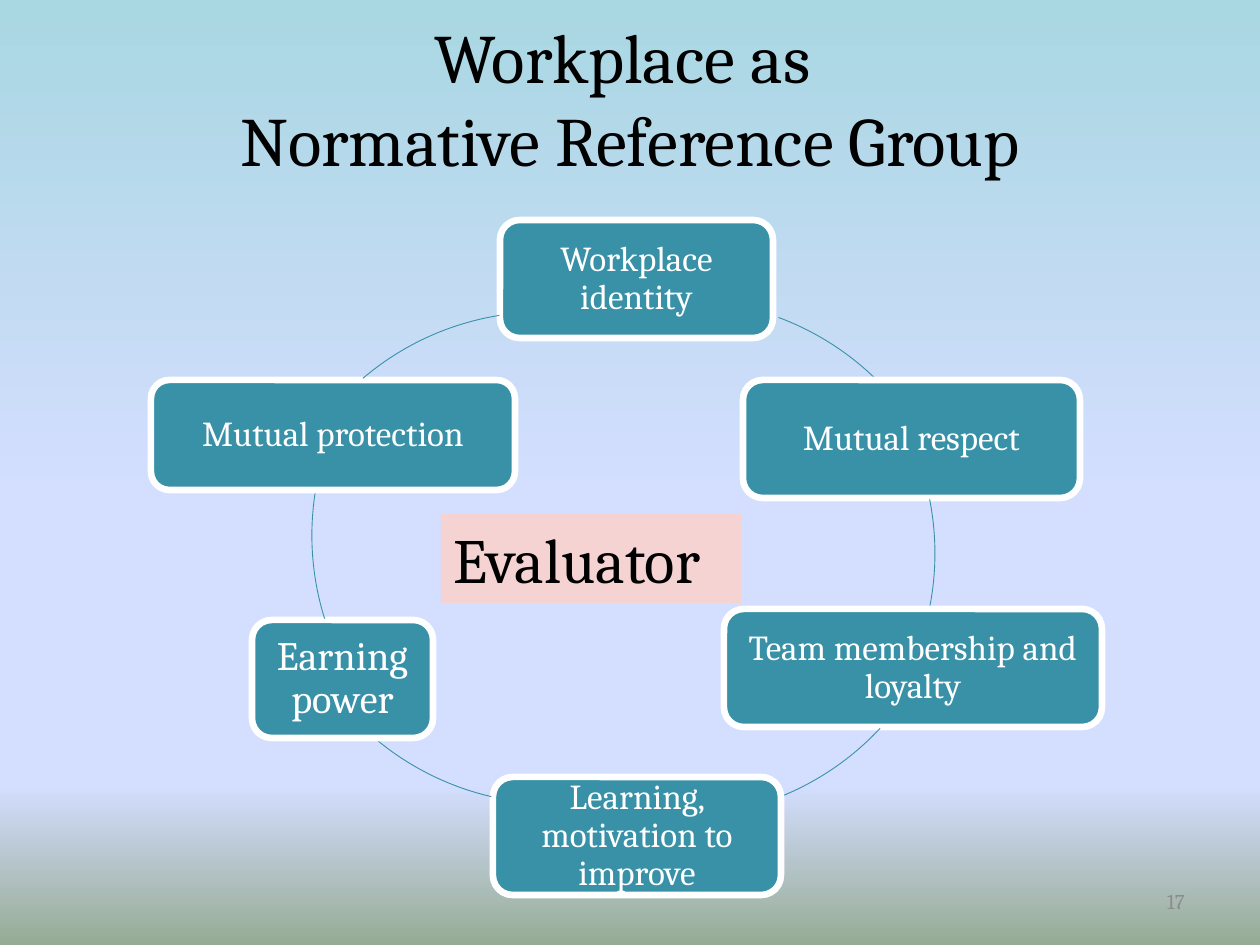
import copy

import pptx
import pptx.dml.color
import pptx.enum.shapes
import pptx.enum.text
import pptx.oxml.ns
import pptx.util

PX = 914400 // 126
TEAL, WHITE, BLACK = "3891A7", "FFFFFF", "000000"
FONT = "Cambria"
SHAPES = pptx.enum.shapes.MSO_SHAPE
ALIGN = pptx.enum.text.PP_ALIGN
ANCHOR = pptx.enum.text.MSO_ANCHOR

BACKGROUND = [(0, "A9D7E2"), (0.53, "D4DEFF"), (0.83, "D4DEFF"), (1, "96AB94")]
TITLE = "Workplace as \vNormative Reference Group"

# text, box (left, top, width, height), font size, inset
NORMS = [
    ("Workplace identity", (500, 220, 273, 118), 20, 10),
    ("Mutual respect", (743, 380, 337, 118), 20, 10),
    ("Team membership and loyalty", (724, 609, 378, 118), 20, 10),
    ("Learning, motivation to improve", (493, 777, 288, 118), 20, 10),
    ("Earning power", (252, 620, 181, 118), 23, 12),
    ("Mutual protection", (151, 380, 364, 110), 20, 10),
]

# left and top of the circle, start and end in degrees clockwise from east
CIRCLE = 557
ARCS = [
    (403, 300, 290.4, 314.3),
    (378, 275, 348.8, 11.2),
    (398, 260, 43, 67.7),
    (276, 247, 103.1, 130),
    (312, 257, 162.6, 189.4),
    (265, 312, 229.6, 260.9),
]


def rgb(color):
    return pptx.dml.color.RGBColor.from_string(color)


def emu(box):
    return [length * PX for length in box]


def paint_background(slide):
    fill = slide.background.fill
    fill.gradient()
    fill.gradient_angle = 270
    stop_list = slide.element.find(".//" + pptx.oxml.ns.qn("a:gsLst"))
    for _ in BACKGROUND[2:]:
        stop_list.append(copy.deepcopy(stop_list[0]))
    for stop, (position, color) in zip(fill.gradient_stops, BACKGROUND):
        stop.position = position
        stop.color.rgb = rgb(color)


def write(shape, text, size, color, align, anchor=ANCHOR.MIDDLE):
    frame = shape.text_frame
    frame.word_wrap = True
    frame.vertical_anchor = anchor
    frame.text = text
    paragraph = frame.paragraphs[0]
    paragraph.alignment = align
    paragraph.font.size = pptx.util.Pt(size)
    paragraph.font.name = FONT
    paragraph.font.color.rgb = rgb(color)
    return paragraph


def add_filled(slide, kind, box, color):
    shape = slide.shapes.add_shape(kind, *emu(box))
    shape.shadow.inherit = False
    shape.fill.solid()
    shape.fill.fore_color.rgb = rgb(color)
    shape.line.fill.background()
    return shape


def add_norm(slide, text, box, size, inset):
    norm = add_filled(slide, SHAPES.ROUNDED_RECTANGLE, box, TEAL)
    norm.line.color.rgb = rgb(WHITE)
    norm.line.width = pptx.util.Pt(3.78)
    frame = norm.text_frame
    frame.margin_left = frame.margin_right = inset * PX
    frame.margin_top = frame.margin_bottom = inset * PX
    write(norm, text, size, WHITE, ALIGN.CENTER).line_spacing = 0.9


def add_arc(slide, left, top, start, end):
    arc = slide.shapes.add_shape(SHAPES.ARC, *emu((left, top, CIRCLE, CIRCLE)))
    arc.shadow.inherit = False
    arc.fill.background()
    arc.line.color.rgb = rgb(TEAL)
    arc.line.width = pptx.util.Pt(0.5)
    for index, angle in enumerate((start, end)):
        arc.adjustments[index] = angle * 0.6  # 60000 units a degree, over 100000


def main():
    deck = pptx.Presentation()
    deck.slide_width, deck.slide_height = emu((1260, 945))
    slide = deck.slides.add_slide(deck.slide_layouts[6])
    paint_background(slide)

    title = slide.shapes.add_textbox(*emu((63, 0, 1134, 195)))
    write(title, TITLE, 39.6, BLACK, ALIGN.CENTER)

    for norm, arc in zip(NORMS, ARCS):
        add_norm(slide, *norm)
        add_arc(slide, *arc)

    number = slide.shapes.add_textbox(*emu((903, 876, 294, 50)))
    write(number, "17", 12, "8C8C8C", ALIGN.RIGHT)

    evaluator = add_filled(slide, SHAPES.RECTANGLE, (441, 514, 300, 89), "F5D3D3")
    write(evaluator, "Evaluator", 36, BLACK, ALIGN.LEFT, ANCHOR.TOP)

    deck.save("out.pptx")


if __name__ == "__main__":
    main()
